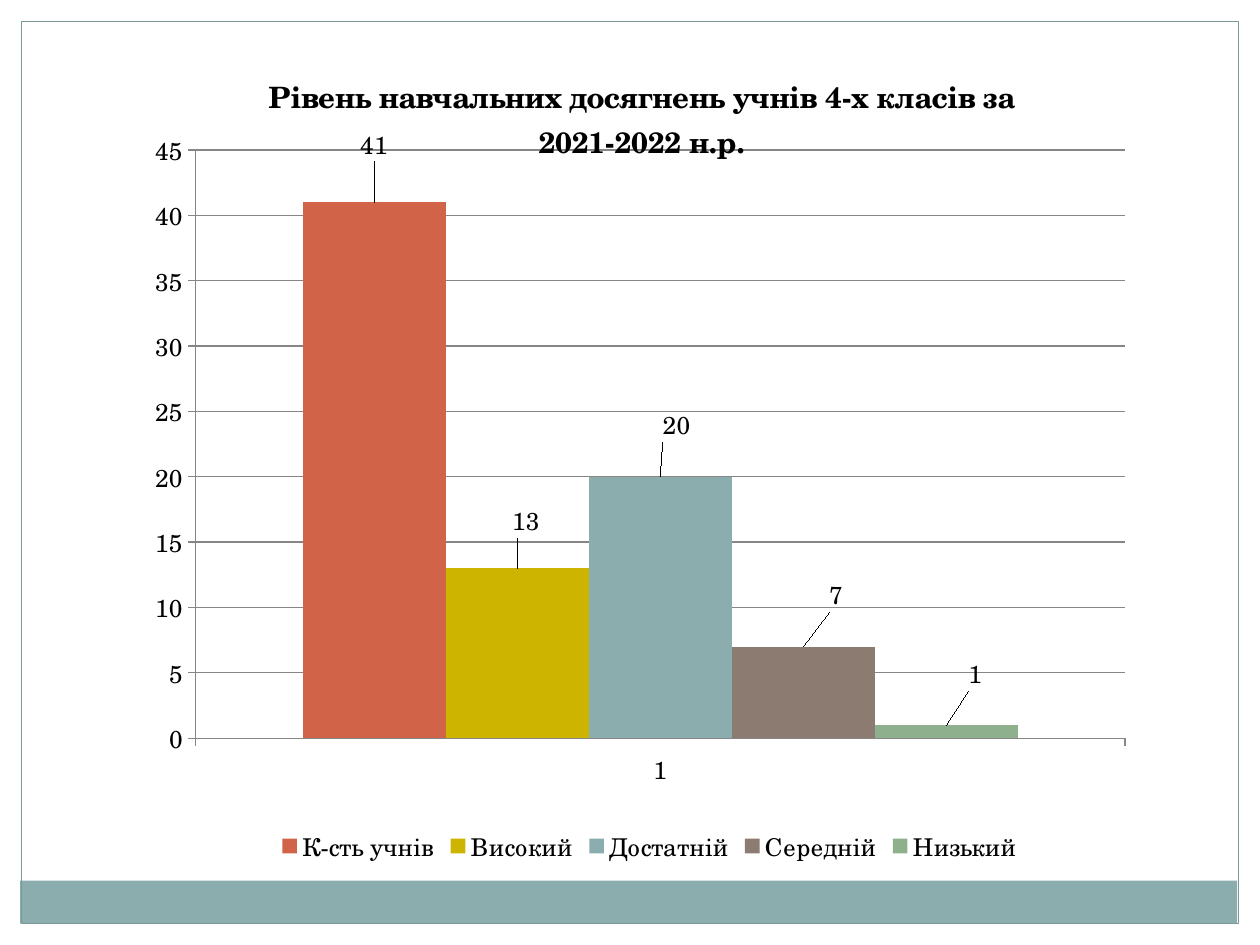
import pptx
import pptx.chart.data
import pptx.dml.color
import pptx.enum.chart
import pptx.enum.shapes
import pptx.oxml
import pptx.oxml.ns
import pptx.util
from pptx.util import Inches


def color(value):
    return pptx.dml.color.RGBColor.from_string(value)


def make_layout(**settings):
    entries = "".join(f'<c:{key} val="{value}"/>' for key, value in settings.items())
    namespace = pptx.oxml.ns.nsdecls("c")
    return pptx.oxml.parse_xml(
        f"<c:layout {namespace}><c:manualLayout>{entries}</c:manualLayout></c:layout>"
    )


deck = pptx.Presentation()
deck.slide_width = Inches(10)
deck.slide_height = Inches(7.5)
page = deck.slides.add_slide(deck.slide_layouts[6])
rectangle = pptx.enum.shapes.MSO_SHAPE.RECTANGLE

panels = [
    (0, 0, 10, 0.17, "FFFFFF"),
    (9.83, 0, 0.17, 7.5, "FFFFFF"),
    (0, 0, 0.17, 7.5, "FFFFFF"),
    (0.16, 6.99, 9.66, 0.34, "8CADAE"),
]
for left, top, width, height, fill in panels:
    panel = page.shapes.add_shape(
        rectangle, Inches(left), Inches(top), Inches(width), Inches(height)
    )
    panel.shadow.inherit = False
    panel.fill.solid()
    panel.fill.fore_color.rgb = color(fill)
    panel.line.fill.background()

frame = page.shapes.add_shape(rectangle, Inches(0.17), Inches(0.17), Inches(9.66), Inches(7.16))
frame.shadow.inherit = False
frame.fill.background()
frame.line.color.rgb = color("7C999A")
frame.line.width = pptx.util.Pt(0.75)

levels = [
    ("К-сть учнів", 41, "D16349", 0, -0.28),
    ("Високий", 13, "CCB400", 0.07, -0.2),
    ("Достатній", 20, "8CADAE", 0.13, -0.23),
    ("Середній", 7, "8C7B70", 0.26, -0.23),
    ("Низький", 1, "8FB08C", 0.23, -0.23),
]
data = pptx.chart.data.CategoryChartData()
data.categories = ["1"]
for name, value, *rest in levels:
    data.add_series(name, [value])

chart_width, chart_height = 9.29, 6.54
chart = page.shapes.add_chart(
    pptx.enum.chart.XL_CHART_TYPE.COLUMN_CLUSTERED,
    Inches(0.51), Inches(0.36), Inches(chart_width), Inches(chart_height), data,
).chart
chart.font.name = "TeX Gyre Schola"
chart.font.size = pptx.util.Pt(14)
chart.font.color.rgb = color("000000")

chart.has_title = True
title = chart.chart_title
title.text_frame.text = "Рівень навчальних досягнень учнів 4-х класів за\n2021-2022 н.р."
for para in title.text_frame.paragraphs:
    for span in para.runs:
        span.font.name = "TeX Gyre Schola"
        span.font.size = pptx.util.Pt(16.8)
        span.font.bold = True
        span.font.color.rgb = color("000000")
title_xml = chart.element.xpath("c:chart/c:title")[0]
for old_layout in title_xml.xpath("c:layout"):
    title_xml.remove(old_layout)
title_xml.xpath("c:tx")[0].addnext(make_layout(
    xMode="edge", yMode="edge", x=1.59 / chart_width, y=0.18 / chart_height,
))
title_xml.xpath("c:overlay")[0].set("val", "1")

chart.has_legend = True
chart.legend.position = pptx.enum.chart.XL_LEGEND_POSITION.BOTTOM
chart.legend.include_in_layout = False

chart.value_axis.minimum_scale = 0
chart.value_axis.maximum_scale = 45
chart.value_axis.major_unit = 5
chart.value_axis.has_major_gridlines = True
for axis in (chart.category_axis, chart.value_axis):
    axis.major_tick_mark = pptx.enum.chart.XL_TICK_MARK.OUTSIDE
for ruled in (chart.category_axis, chart.value_axis, chart.value_axis.major_gridlines):
    ruled.format.line.color.rgb = color("868686")
    ruled.format.line.width = pptx.util.Pt(0.75)

plot = chart.plots[0]
plot.gap_width = 150
plot.overlap = 0
plot.vary_by_categories = False
for series, (name, value, fill, shift_x, shift_y) in zip(plot.series, levels):
    series.format.fill.solid()
    series.format.fill.fore_color.rgb = color(fill)
    series.data_labels.show_value = True
    label = series.points[0].data_label
    label.position = pptx.enum.chart.XL_LABEL_POSITION.OUTSIDE_END
    labels_xml = series.data_labels._element
    labels_xml.xpath("c:dLbl/c:idx")[0].addnext(
        make_layout(x=shift_x / chart_width, y=shift_y / chart_height)
    )
    labels_xml.append(pptx.oxml.parse_xml(
        f'<c:extLst {pptx.oxml.ns.nsdecls("c")}>'
        '<c:ext uri="{CE6537A1-D6FC-4f65-9D91-7224C49458BB}" '
        'xmlns:c15="http://schemas.microsoft.com/office/drawing/2012/chart">'
        '<c15:showLeaderLines val="0"/></c:ext></c:extLst>'
    ))

plot_area = chart.element.xpath("c:chart/c:plotArea")[0]
for old_layout in plot_area.xpath("c:layout"):
    plot_area.remove(old_layout)
plot_area.insert(0, make_layout(
    layoutTarget="inner", xMode="edge", yMode="edge",
    x=1.04 / chart_width, y=0.83 / chart_height,
    w=7.38 / chart_width, h=4.67 / chart_height,
))

deck.save("out.pptx")
